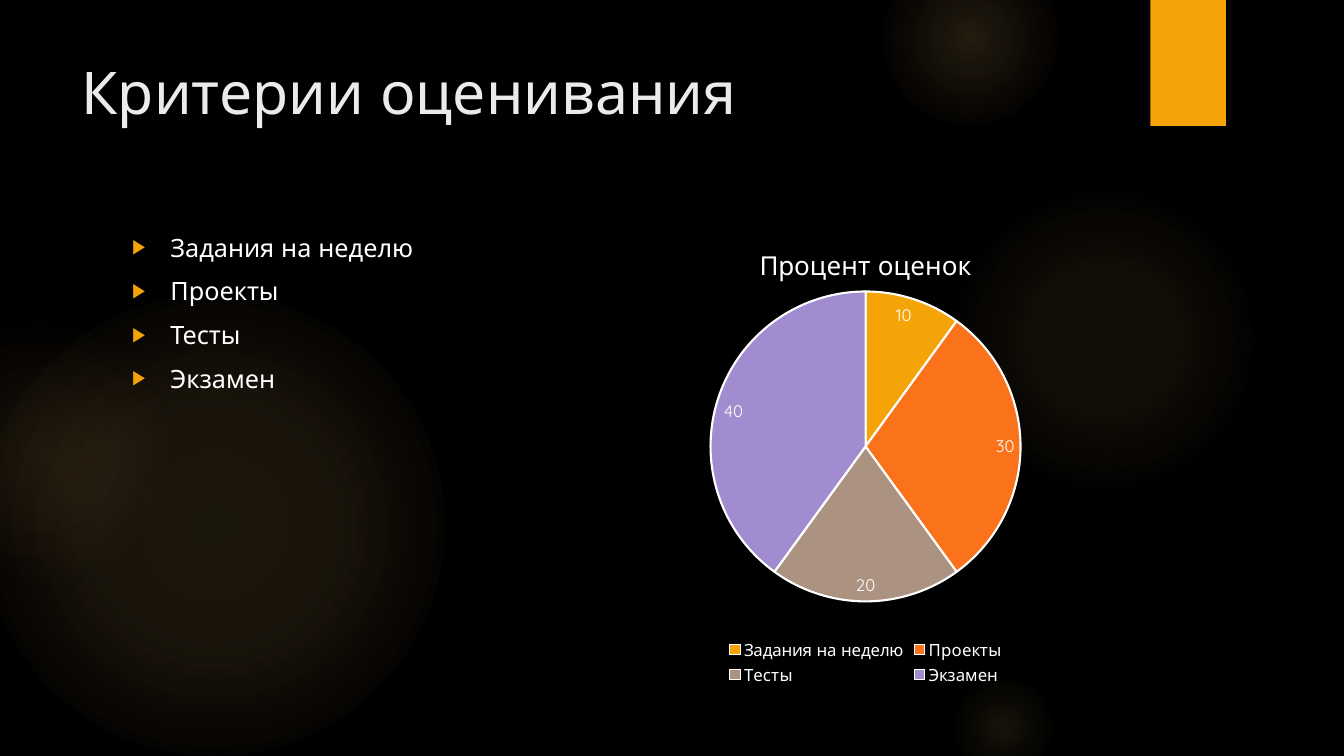
import pptx
import pptx.chart.data
import pptx.dml.color
import pptx.enum.chart
import pptx.enum.shapes
import pptx.enum.text
import pptx.oxml
import pptx.oxml.ns
import pptx.util

Inches, Pt = pptx.util.Inches, pptx.util.Pt
RGBColor = pptx.dml.color.RGBColor
MSO_SHAPE = pptx.enum.shapes.MSO_SHAPE
PP_ALIGN = pptx.enum.text.PP_ALIGN

BLACK = RGBColor(0x00, 0x00, 0x00)
WHITE = RGBColor(0xFF, 0xFF, 0xFF)
PALE = RGBColor(0xEB, 0xEB, 0xEB)
AMBER = RGBColor(0xF5, 0xA4, 0x08)
ORANGE = RGBColor(0xFA, 0x73, 0x1A)
TAUPE = RGBColor(0xAB, 0x92, 0x81)
LILAC = RGBColor(0xA1, 0x8C, 0xD0)
GLOW = RGBColor(0xFA, 0xC9, 0x6A)
GLOW_EDGE = RGBColor(0xF5, 0x9B, 0x74)

# Left, top, diameter, (position %, opacity %) stops, outer colour
GLOWS = [
    (-0.17, 2.92, 4.58, [(0, 11), (36, 10), (75, 0)], GLOW),
    (-0.92, 3.17, 2.58, [(0, 8), (36, 5), (71, 0)], GLOW_EDGE),
    (9.41, 1.83, 3.08, [(0, 7), (36, 6), (69, 0)], GLOW),
    (8.75, -0.5, 1.75, [(0, 14), (36, 7), (73, 0)], GLOW),
    (9.41, 6.67, 1.08, [(0, 10), (31, 5), (66, 0)], GLOW),
]
CRITERIA = [
    ("Задания на неделю", 10, AMBER),
    ("Проекты", 30, ORANGE),
    ("Тесты", 20, TAUPE),
    ("Экзамен", 40, LILAC),
]


def xml(tag, body="", attrs=""):
    """Parse one DrawingML or chart element given as text."""
    ns = pptx.oxml.ns.nsdecls("a", "c")
    return pptx.oxml.parse_xml(f"<{tag} {ns} {attrs}>{body}</{tag}>")


class Deck:
    """Holds the style and the current slide."""

    font = "Quicksand"

    def __init__(self):
        self.prs = pptx.Presentation()
        self.prs.slide_width = Inches(13.33)
        self.prs.slide_height = Inches(7.5)
        self.s = self.prs.slides.add_slide(self.prs.slide_layouts[1])
        self.s.background.fill.solid()
        self.s.background.fill.fore_color.rgb = BLACK

    def style(self, font, size, color):
        font.name = self.font
        font.size = Pt(size)
        font.color.rgb = color

    def shape(self, kind, left, top, width, height, color):
        sp = self.s.shapes.add_shape(
            kind, Inches(left), Inches(top), Inches(width), Inches(height))
        sp.shadow.inherit = False
        sp.fill.solid()
        sp.fill.fore_color.rgb = color
        sp.line.fill.background()
        return sp

    def glow(self, left, top, size, stops, edge):
        """Add a soft round light that fades out from its centre."""
        sp = self.shape(MSO_SHAPE.OVAL, left, top, size, size, GLOW)
        colors = [GLOW, GLOW, edge]
        gs = "".join(
            f'<a:gs pos="{pos * 1000}"><a:srgbClr val="{color}">'
            f'<a:alpha val="{alpha * 1000}"/></a:srgbClr></a:gs>'
            for (pos, alpha), color in zip(stops, colors))
        centre = 'l="50000" t="50000" r="50000" b="50000"'
        grad = xml("a:gradFill",
                   f'<a:gsLst>{gs}</a:gsLst>'
                   f'<a:path path="circle"><a:fillToRect {centre}/></a:path>')
        spPr = sp.element.spPr
        spPr.replace(spPr.find(pptx.oxml.ns.qn("a:solidFill")), grad)

    def placeholder(self, idx, left, top, width, height):
        """Move a placeholder in front of the backdrop and return its frame."""
        sp = self.s.placeholders[idx]
        sp.left, sp.top = Inches(left), Inches(top)
        sp.width, sp.height = Inches(width), Inches(height)
        sp.element.getparent().append(sp.element)
        tf = sp.text_frame
        tf.word_wrap = True
        tf.auto_size = pptx.enum.text.MSO_AUTO_SIZE.NONE
        tf.vertical_anchor = pptx.enum.text.MSO_ANCHOR.TOP
        return tf

    def run(self, p, text, size, color):
        p.alignment = PP_ALIGN.LEFT
        r = p.add_run()
        r.text = text
        self.style(r.font, size, color)

    def title(self, text, *box):
        tf = self.placeholder(0, *box)
        self.run(tf.paragraphs[0], text, 42, PALE)

    def bullets(self, items, *box):
        tf = self.placeholder(1, *box)
        for i, item in enumerate(items):
            p = tf.add_paragraph() if i else tf.paragraphs[0]
            self.run(p, item, 18, WHITE)
            p.space_after = Pt(6)
            pPr = p._p.get_or_add_pPr()
            pPr.set("marL", str(Inches(0.38)))
            pPr.set("indent", str(-Inches(0.38)))
            pPr.append(xml("a:buClr", f'<a:srgbClr val="{AMBER}"/>'))
            pPr.append(xml("a:buSzPct", attrs='val="80000"'))
            pPr.append(xml("a:buFont", attrs='typeface="Arial"'))
            pPr.append(xml("a:buChar", attrs='char="▶"'))

    def pie(self, title, slices, left, top, width, height):
        names, values, colors = zip(*slices)
        data = pptx.chart.data.CategoryChartData()
        data.categories = names
        data.add_series(title, values)
        chart = self.s.shapes.add_chart(
            pptx.enum.chart.XL_CHART_TYPE.PIE, Inches(left), Inches(top),
            Inches(width), Inches(height), data).chart
        self.style(chart.font, 10, WHITE)

        chart.has_title = True
        p = chart.chart_title.text_frame.paragraphs[0]
        r = p.add_run()
        r.text = title
        self.style(r.font, 18.6, WHITE)
        r.font.bold = False
        chart.chart_title.include_in_layout = False

        chart.has_legend = True
        chart.legend.position = pptx.enum.chart.XL_LEGEND_POSITION.BOTTOM
        chart.legend.include_in_layout = False
        self.style(chart.legend.font, 12, WHITE)

        plot = chart.plots[0]
        plot.vary_by_categories = True
        for i, color in enumerate(colors):
            point = plot.series[0].points[i].format
            point.fill.solid()
            point.fill.fore_color.rgb = color
            point.line.color.rgb = WHITE
            point.line.width = Pt(1.5)
        labels = plot.series[0].data_labels
        labels.show_value = True
        labels.position = pptx.enum.chart.XL_LABEL_POSITION.INSIDE_END
        self.style(labels.font, 12, WHITE)
        self.plot_layout(chart, x=0.18, y=0.14, w=0.64, h=0.67)

    def plot_layout(self, chart, **box):
        """Fix the inner plot area as fractions of the chart."""
        area = chart.plots[0]._element.getparent()
        for old in area.findall(pptx.oxml.ns.qn("c:layout")):
            area.remove(old)
        parts = '<c:layoutTarget val="inner"/>'
        parts += "".join(f'<c:{k}Mode val="edge"/>' for k in "xy")
        parts += "".join(f'<c:{k} val="{v}"/>' for k, v in box.items())
        area.insert(0, xml("c:layout", f"<c:manualLayout>{parts}</c:manualLayout>"))


def main():
    deck = Deck()
    for glow in GLOWS:
        deck.glow(*glow)
    deck.shape(MSO_SHAPE.RECTANGLE, 11.41, 0, 0.75, 1.25, AMBER)
    deck.title("Критерии оценивания", 0.71, 0.5, 10.29, 1.53)
    deck.bullets([name for name, _, _ in CRITERIA], 1.21, 2.25, 4.81, 4.59)
    deck.pie("Процент оценок", CRITERIA, 6.18, 2.25, 4.81, 4.59)
    deck.prs.save("out.pptx")


if __name__ == "__main__":
    main()
